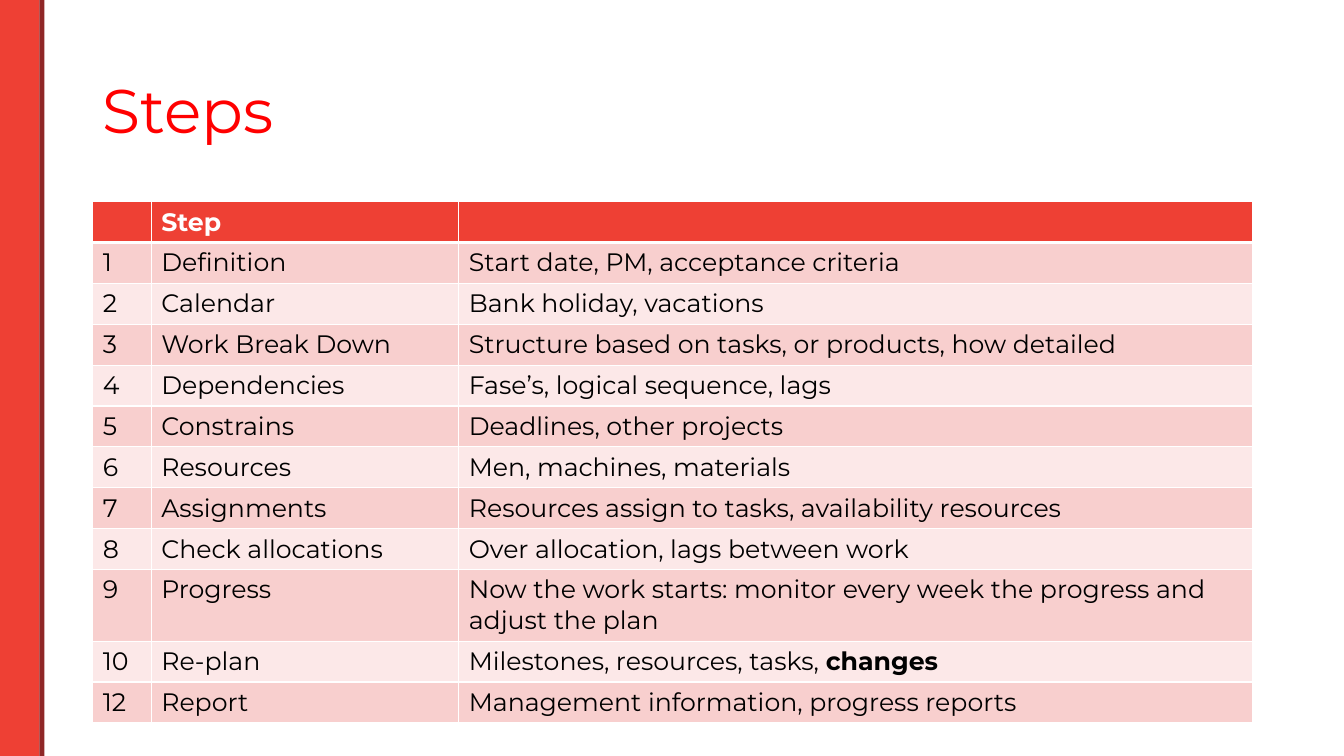
from lxml.etree import SubElement
from pptx import Presentation
from pptx.dml.color import RGBColor
from pptx.enum.shapes import MSO_SHAPE
from pptx.enum.text import MSO_ANCHOR, MSO_AUTO_SIZE, PP_ALIGN
from pptx.oxml.ns import qn
from pptx.util import Inches, Pt

WIDTH, HEIGHT = 13.33, 7.5
FONT = "Montserrat"
RED, DARK_RED, TITLE_RED = "EE4034", "8F2626", "FF0000"
BANDS = ("FCE8E8", "F8CFCE")
WHITE, BLACK = "FFFFFF", "000000"
LEFT, CONTENT_WIDTH = 0.92, 11.5
COLUMN_WIDTHS = (0.58, 3.05, 7.87)
TABLE_HEIGHT = 4.87

# Each cell is text, or a list of (text, bold) parts
STEPS = [
    ("", "Step", ""),
    ("1", "Definition", "Start date, PM, acceptance criteria"),
    ("2", "Calendar", "Bank holiday, vacations"),
    ("3", "Work Break Down", "Structure based on tasks, or products, how detailed"),
    ("4", "Dependencies", "Fase’s, logical sequence, lags"),
    ("5", "Constrains", "Deadlines, other projects"),
    ("6", "Resources", "Men, machines, materials"),
    ("7", "Assignments", "Resources assign to tasks, availability resources"),
    ("8", "Check allocations", "Over allocation, lags between work"),
    ("9", "Progress",
     "Now the work starts: monitor every week the progress and adjust the plan"),
    ("10", "Re-plan", [("Milestones, resources, tasks, ", False), ("changes", True)]),
    ("12", "Report", "Management information, progress reports"),
]


def color(value):
    return RGBColor.from_string(value)


def box_lengths(box):
    return [Inches(length) for length in box]


def format_font(font, size, fill, bold=False):
    for name, value in {"name": FONT, "size": Pt(size), "bold": bold}.items():
        setattr(font, name, value)
    font.color.rgb = color(fill)


def add_bar(slide, box, fill):
    shape = slide.shapes.add_shape(MSO_SHAPE.RECTANGLE, *box_lengths(box))
    shape.shadow.inherit = False
    shape.fill.solid()
    shape.fill.fore_color.rgb = color(fill)
    shape.line.fill.background()


def add_side_band(slide, box):
    left, top, width, height = box
    edge = 0.05
    add_bar(slide, (left, top, width - edge, height), RED)
    add_bar(slide, (left + width - edge, top, edge, height), DARK_RED)


def add_title(slide, box, text):
    title = slide.shapes.title
    for name, value in zip(("left", "top", "width", "height"), box_lengths(box)):
        setattr(title, name, value)
    frame = title.text_frame
    settings = {"text": text, "vertical_anchor": MSO_ANCHOR.MIDDLE,
                "word_wrap": True, "auto_size": MSO_AUTO_SIZE.NONE}
    for name, value in settings.items():
        setattr(frame, name, value)
    paragraph = frame.paragraphs[0]
    paragraph.alignment = PP_ALIGN.LEFT
    paragraph.line_spacing = 0.9
    format_font(paragraph.runs[0].font, 44, TITLE_RED)


def add_borders(cell, widths):
    properties = cell._tc.get_or_add_tcPr()
    for position, (side, width) in enumerate(widths.items()):
        line = SubElement(properties, qn(f"a:ln{side}"), w=str(Pt(width)))
        fill = SubElement(line, qn("a:solidFill"))
        SubElement(fill, qn("a:srgbClr"), val=WHITE)
        properties.insert(position, line)  # borders come before the fill


def fill_cell(cell, content, row_index):
    header = row_index == 0
    cell.fill.solid()
    cell.fill.fore_color.rgb = color(RED if header else BANDS[row_index % 2])
    add_borders(cell, {"L": 1, "R": 1, "T": 3 if row_index == 1 else 1,
                       "B": 3 if header else 1})
    parts = [(content, header)] if isinstance(content, str) else content
    for text, bold in parts:
        if text:
            run = cell.text_frame.paragraphs[0].add_run()
            run.text = text
            format_font(run.font, 18, WHITE if header else BLACK, bold)


def add_steps_table(slide, box):
    table = slide.shapes.add_table(
        len(STEPS), len(COLUMN_WIDTHS), *box_lengths(box)).table
    for column, width in zip(table.columns, COLUMN_WIDTHS):
        column.width = Inches(width)
    for row_index, (row, contents) in enumerate(zip(table.rows, STEPS)):
        row.height = Inches(box[3] / len(STEPS))
        for cell, content in zip(row.cells, contents):
            fill_cell(cell, content, row_index)


def main():
    presentation = Presentation()
    presentation.slide_width = Inches(WIDTH)
    presentation.slide_height = Inches(HEIGHT)
    slide = presentation.slides.add_slide(presentation.slide_layouts[5])
    add_side_band(slide, (0, 0, 0.44, HEIGHT))
    add_title(slide, (LEFT, 0.4, CONTENT_WIDTH, 1.45), "Steps")
    add_steps_table(slide, (LEFT, 2, CONTENT_WIDTH, TABLE_HEIGHT))
    presentation.save("out.pptx")


if __name__ == "__main__":
    main()
